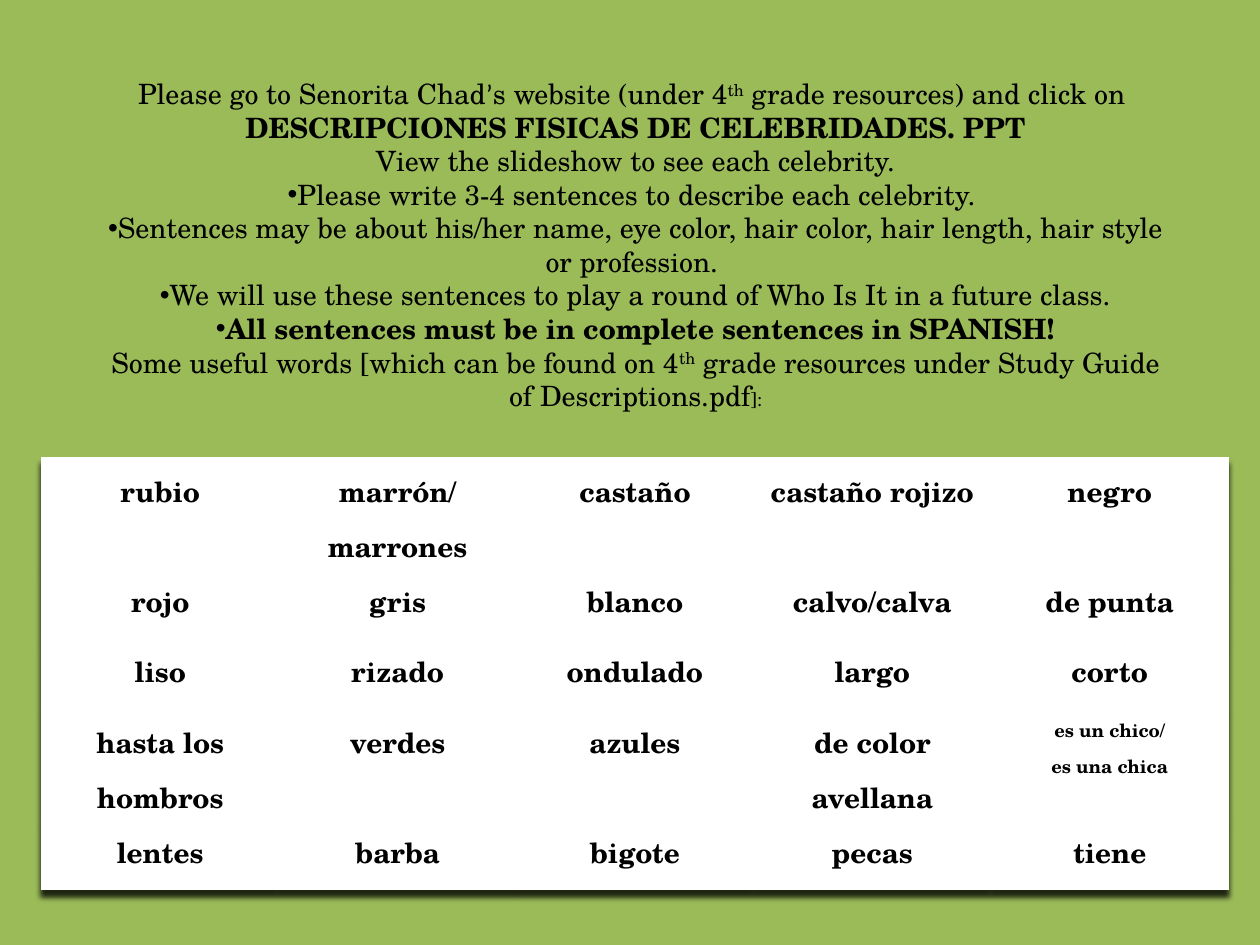
from dataclasses import dataclass

from lxml import etree
from pptx import Presentation
from pptx.dml.color import RGBColor
from pptx.enum.text import MSO_ANCHOR, PP_ALIGN
from pptx.oxml.ns import qn
from pptx.util import Inches, Pt

CENTER = PP_ALIGN.CENTER
MIDDLE = MSO_ANCHOR.MIDDLE


@dataclass(frozen=True)
class Theme:
    background: str = "9BBB59"
    cell: str = "FFFFFF"
    text: str = "000000"
    font: str = "TeX Gyre Schola"
    apostrophe_font: str = "Calibri"
    body_size: float = 16
    note_size: float = 11
    small_size: float = 10.5
    table_spacing: float = 1.28


THEME = Theme()
BOLD = {"bold": True}
SUPERSCRIPT = {"raised": True}

# Each paragraph: whether it has a bullet, then its runs with their formats.
INSTRUCTIONS = [
    (False, [("Please go to Senorita Chad", {}), ("’", {"font": THEME.apostrophe_font}),
             ("s website (under 4", {}), ("th", SUPERSCRIPT),
             (" grade resources) and click on ", {})]),
    (False, [("DESCRIPCIONES FISICAS DE CELEBRIDADES. PPT", BOLD)]),
    (False, [("View the slideshow to see each celebrity.", {})]),
    (True, [("Please write 3-4 sentences to describe each celebrity. ", {})]),
    (True, [("Sentences may be about his/her name, eye color, hair color, "
             "hair length, hair style or profession. ", {})]),
    (True, [("We will use these sentences to play a round of Who Is It "
             "in a future class.", {})]),
    (True, [("All sentences must be in complete sentences in SPANISH!", BOLD)]),
    (False, [("Some useful words [which can be found on 4", {}), ("th", SUPERSCRIPT),
             (" grade resources under Study Guide of Descriptions.pdf", {}),
             ("]:", {"size": THEME.note_size})]),
]

SMALL_WORDS = "es un chico/\nes una chica"
WORDS = [
    ["rubio", "marrón/\nmarrones", "castaño", "castaño rojizo", "negro"],
    ["rojo", "gris", "blanco", "calvo/calva", "de punta"],
    ["liso", "rizado", "ondulado", "largo", "corto"],
    ["hasta los hombros", "verdes", "azules", "de color avellana", SMALL_WORDS],
    ["lentes", "barba", "bigote", "pecas", "tiene"],
]
ROW_HEIGHTS = [0.8, 0.56, 0.56, 0.8, 0.56]


class SlideBuilder:
    def __init__(self, slide, theme):
        self.slide = slide
        self.theme = theme
        fill = slide.background.fill
        fill.solid()
        fill.fore_color.rgb = RGBColor.from_string(theme.background)

    def style_run(self, run, size=None, font=None, bold=False, raised=False):
        run.font.name = font or self.theme.font
        run.font.size = Pt(size or self.theme.body_size)
        run.font.bold = bold
        run.font.color.rgb = RGBColor.from_string(self.theme.text)
        if raised:
            run.font._element.set("baseline", "30000")

    def add_bullet(self, paragraph):
        properties = paragraph._p.get_or_add_pPr()
        properties.set("marL", "0")
        properties.set("indent", "0")
        etree.SubElement(properties, qn("a:buFont"), typeface="Arial")
        etree.SubElement(properties, qn("a:buChar"), char="•")

    def add_text(self, left, top, width, height, paragraphs):
        box = self.slide.shapes.add_textbox(
            Inches(left), Inches(top), Inches(width), Inches(height))
        frame = box.text_frame
        frame.word_wrap = True
        frame.vertical_anchor = MIDDLE
        frame.margin_bottom = Inches(0.35)
        for index, (bulleted, runs) in enumerate(paragraphs):
            paragraph = frame.add_paragraph() if index else frame.paragraphs[0]
            paragraph.alignment = CENTER
            if bulleted:
                self.add_bullet(paragraph)
            for text, style in runs:
                run = paragraph.add_run()
                run.text = text
                self.style_run(run, **style)

    def add_table(self, left, top, width, row_heights, rows):
        frame = self.slide.shapes.add_table(
            len(rows), len(rows[0]), Inches(left), Inches(top),
            Inches(width), Inches(sum(row_heights)))
        table = frame.table
        for row, height in zip(table.rows, row_heights):
            row.height = Inches(height)
        for row_index, words in enumerate(rows):
            for column_index, text in enumerate(words):
                self.fill_cell(table.cell(row_index, column_index), text)
        self.add_table_shadow(table)

    def fill_cell(self, cell, text):
        cell.margin_left = cell.margin_right = Inches(0.07)
        cell.margin_top = cell.margin_bottom = 0
        cell.text_frame.text = text
        size = self.theme.small_size if text == SMALL_WORDS else self.theme.body_size
        for paragraph in cell.text_frame.paragraphs:
            paragraph.alignment = CENTER
            paragraph.line_spacing = self.theme.table_spacing
            for run in paragraph.runs:
                self.style_run(run, size=size, bold=True)
        properties = cell._tc.get_or_add_tcPr()
        for side in ("a:lnL", "a:lnR", "a:lnT", "a:lnB"):
            line = etree.SubElement(properties, qn(side), w=str(Pt(1)))
            solid = etree.SubElement(line, qn("a:solidFill"))
            etree.SubElement(solid, qn("a:srgbClr"), val=self.theme.cell)
        cell.fill.solid()
        cell.fill.fore_color.rgb = RGBColor.from_string(self.theme.cell)

    def add_table_shadow(self, table):
        effects = etree.Element(qn("a:effectLst"))
        shadow = etree.SubElement(
            effects, qn("a:outerShdw"), blurRad=str(Pt(3)), dist=str(Pt(4)),
            dir="5400000", rotWithShape="0")
        color = etree.SubElement(shadow, qn("a:srgbClr"), val=self.theme.text)
        etree.SubElement(color, qn("a:alpha"), val="80000")
        table._tbl.tblPr.insert(0, effects)


def main():
    presentation = Presentation()
    presentation.slide_width = Inches(10)
    presentation.slide_height = Inches(7.5)
    slide = presentation.slides.add_slide(presentation.slide_layouts[6])
    builder = SlideBuilder(slide, THEME)
    builder.add_table(0.33, 3.63, 9.42, ROW_HEIGHTS, WORDS)
    builder.add_text(0.67, 0.54, 8.75, 3.1, INSTRUCTIONS)
    presentation.save("out.pptx")


if __name__ == "__main__":
    main()
